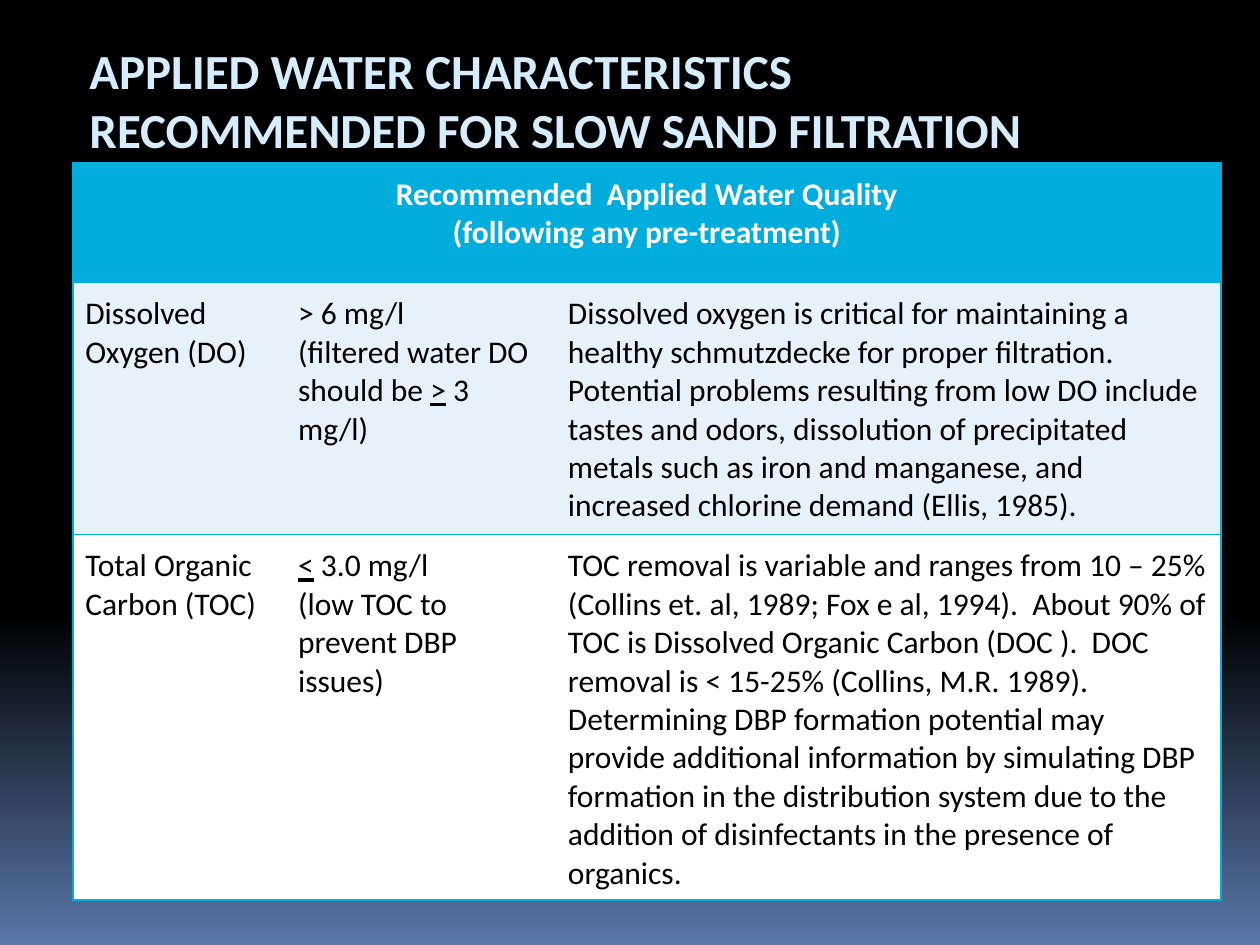
from lxml.etree import SubElement
from pptx import Presentation
from pptx.dml.color import RGBColor
from pptx.enum.text import MSO_ANCHOR, PP_ALIGN
from pptx.oxml.ns import qn
from pptx.util import Cm, Pt

ACCENT = "00ADDC"
BLACK = "000000"
WHITE = "FFFFFF"


def write_text(frame, paragraphs, size=18, color=BLACK, bold=False, align=PP_ALIGN.LEFT):
    for index, runs in enumerate(paragraphs):
        paragraph = frame.paragraphs[0] if index == 0 else frame.add_paragraph()
        paragraph.alignment = align
        paragraph.line_spacing = 1.0
        paragraph.space_before = Pt(0)
        for text, underline in runs:
            run = paragraph.add_run()
            run.text = text
            run.font.name = "Calibri"
            run.font.size = Pt(size)
            run.font.bold = bold
            run.font.underline = underline
            run.font.color.rgb = RGBColor.from_string(color)


def set_border(cell, side, visible):
    line = SubElement(cell._tc.get_or_add_tcPr(), qn(f"a:ln{side}"), w=str(Pt(1)))
    if visible:
        fill = SubElement(line, qn("a:solidFill"))
        SubElement(fill, qn("a:srgbClr"), val=ACCENT)
    else:
        SubElement(line, qn("a:noFill"))


presentation = Presentation()
presentation.slide_width = Cm(25.4)
presentation.slide_height = Cm(19.05)
slide = presentation.slides.add_slide(presentation.slide_layouts[5])

background = slide.background.fill
background.gradient()
background.gradient_angle = 270
for stop, (position, color) in zip(background.gradient_stops, [(0.65, BLACK), (1, "5A77A9")]):
    stop.position = position
    stop.color.rgb = RGBColor.from_string(color)

title = slide.shapes.title
title.left, title.top, title.width, title.height = Cm(1.55), Cm(0.69), Cm(21.29), Cm(2.64)
title.text_frame.word_wrap = True
title.text_frame.vertical_anchor = MSO_ANCHOR.TOP
write_text(
    title.text_frame,
    [
        [("APPLIED WATER CHARACTERISTICS", False)],
        [("RECOMMENDED FOR SLOW SAND FILTRATION", False)],
    ],
    size=28, color="D6ECFF", bold=True,
)

header = [
    [("Recommended  Applied Water Quality", False)],
    [("(following any pre-treatment)", False)],
]
body = [
    [
        [[("Dissolved Oxygen (DO)", False)]],
        [
            [("> 6 mg/l", False)],
            [("(filtered water DO should be ", False), (">", True), (" 3 mg/l)", False)],
        ],
        [[(
            "Dissolved oxygen is critical for maintaining a healthy schmutzdecke for "
            "proper filtration.  Potential problems resulting from low DO include tastes "
            "and odors, dissolution of precipitated metals such as iron and manganese, "
            "and increased chlorine demand (Ellis, 1985).", False,
        )]],
    ],
    [
        [[("Total Organic Carbon (TOC)", False)]],
        [
            [("<", True), (" 3.0 mg/l", False)],
            [("(low TOC to  prevent DBP issues)", False)],
        ],
        [[(
            "TOC removal is variable and ranges from 10 – 25% (Collins et. al, 1989; "
            "Fox e al, 1994).  About 90% of TOC is Dissolved Organic Carbon (DOC ).  "
            "DOC removal is < 15-25% (Collins, M.R. 1989).  Determining DBP formation "
            "potential may provide additional information by simulating DBP formation in "
            "the distribution system due to the addition of disinfectants in the presence "
            "of organics.", False,
        )]],
    ],
]
column_widths = [4.29, 5.44, 13.41]
row_heights = [2.41, 5.08, 7.37]
row_fills = [ACCENT, "E7F1F9", WHITE]

table = slide.shapes.add_table(
    3, 3, Cm(1.47), Cm(3.28), Cm(sum(column_widths)), Cm(sum(row_heights))
).table
table.first_row = False
table.horz_banding = False
for column, width in zip(table.columns, column_widths):
    column.width = Cm(width)
for row, height in zip(table.rows, row_heights):
    row.height = Cm(height)
table.cell(0, 0).merge(table.cell(0, 2))

for row_index, fill_color in enumerate(row_fills):
    for column_index in range(3):
        cell = table.cell(row_index, column_index)
        cell.margin_left = cell.margin_right = cell.margin_top = Cm(0.25)
        cell.margin_bottom = Cm(0.12)
        set_border(cell, "L", column_index == 0)
        set_border(cell, "R", column_index == 2 or row_index == 0)
        set_border(cell, "T", True)
        set_border(cell, "B", True)
        cell.fill.solid()
        cell.fill.fore_color.rgb = RGBColor.from_string(fill_color)
        if row_index > 0:
            write_text(cell.text_frame, body[row_index - 1][column_index])

write_text(table.cell(0, 0).text_frame, header, color=WHITE, bold=True, align=PP_ALIGN.CENTER)

presentation.save("out.pptx")
